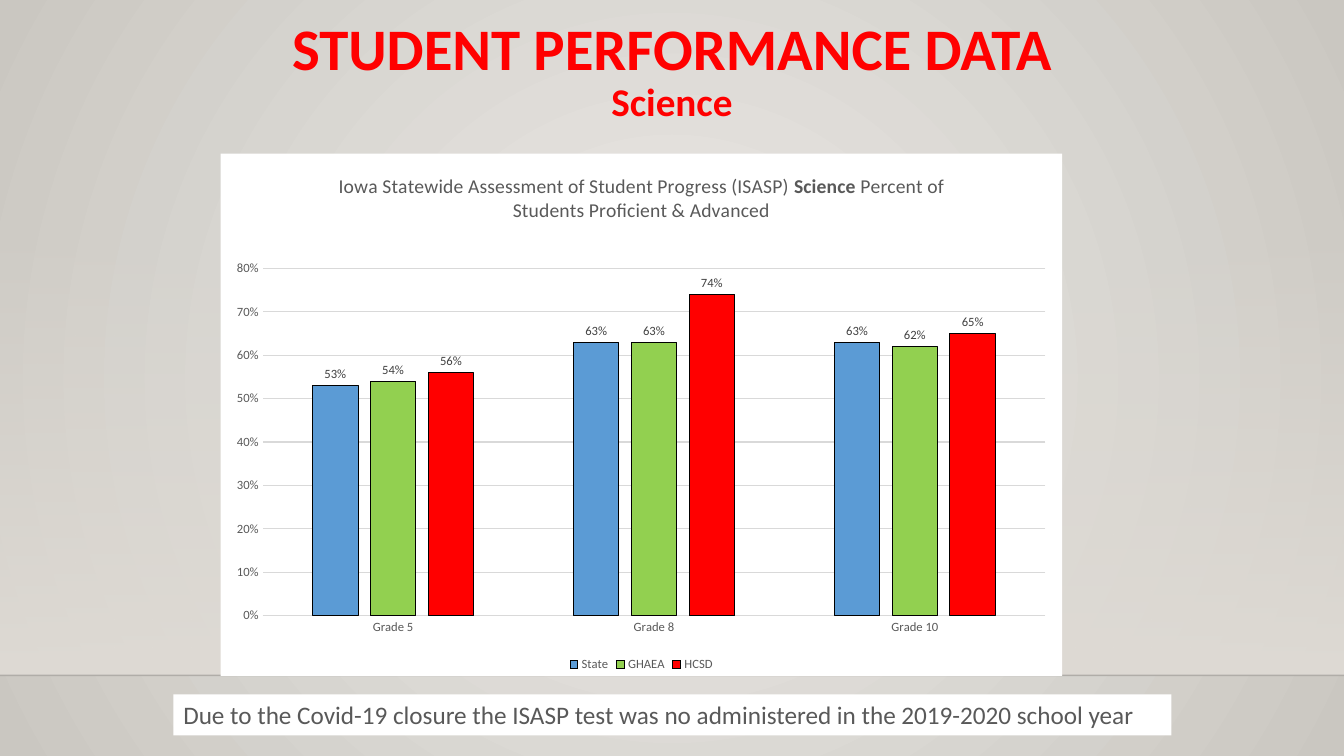
"""Build the science performance slide with its clustered column chart."""
from dataclasses import dataclass

from lxml import etree
from pptx import Presentation
from pptx.chart.data import CategoryChartData
from pptx.dml.color import RGBColor
from pptx.enum import chart as ch, shapes, text
from pptx.oxml import parse_xml
from pptx.oxml.ns import nsdecls, qn
from pptx.util import Cm, Pt


@dataclass(frozen=True)
class Theme:
    font: str = "Calibri"
    red: RGBColor = RGBColor(0xFF, 0, 0)
    blue: RGBColor = RGBColor(0x5B, 0x9B, 0xD5)
    green: RGBColor = RGBColor(0x92, 0xD0, 0x50)
    black: RGBColor = RGBColor(0, 0, 0)
    white: RGBColor = RGBColor(0xFF, 0xFF, 0xFF)
    grey: RGBColor = RGBColor(0x59, 0x59, 0x59)
    label: RGBColor = RGBColor(0x40, 0x40, 0x40)
    grid: RGBColor = RGBColor(0xD9, 0xD9, 0xD9)
    wall: RGBColor = RGBColor(0xDF, 0xDB, 0xD5)
    glow: RGBColor = RGBColor(0xEC, 0xEA, 0xE7)
    edge: RGBColor = RGBColor(0xCA, 0xC7, 0xC1)
    heading: Pt = Pt(42)
    subject: Pt = Pt(28)
    note: Pt = Pt(18)
    chart_title: Pt = Pt(14)
    chart_text: Pt = Pt(9)


theme = Theme()


def set_font(font, size, color, bold=False):
    font.name = theme.font
    font.size = size
    font.bold = bold
    font.color.rgb = color


def set_gradient(fill, colors):
    fill.gradient()
    for stop, position, color in zip(fill.gradient_stops, (0, 1), colors):
        stop.position = position
        stop.color.rgb = color


deck = Presentation()
deck.slide_width, deck.slide_height = Cm(33.87), Cm(19.05)
slide = deck.slides.add_slide(deck.slide_layouts[6])

set_gradient(slide.background.fill, (theme.glow, theme.edge))
backdrop = next(slide.element.iter(qn("a:gradFill")))
backdrop.remove(backdrop.find(qn("a:lin")))
radial = etree.SubElement(backdrop, qn("a:path"), {"path": "circle"})
etree.SubElement(radial, qn("a:fillToRect"), dict.fromkeys("ltrb", "50000"))

wall = slide.shapes.add_shape(
    shapes.MSO_SHAPE.RECTANGLE, 0, Cm(5.61), deck.slide_width, Cm(11.41))
wall.shadow.inherit = False
wall.line.fill.background()
set_gradient(wall.fill, (theme.wall, theme.wall))
wall.fill.gradient_angle = 270
clear_stop = next(wall.element.spPr.iter(qn("a:srgbClr")))
etree.SubElement(clear_stop, qn("a:alpha"), val="0")

floor = slide.shapes.add_connector(
    shapes.MSO_CONNECTOR.STRAIGHT, 0, Cm(17.02), deck.slide_width, Cm(17.02))
floor.line.width = Pt(1)
floor.line.color.rgb = theme.black
floor_color = next(floor.element.spPr.iter(qn("a:srgbClr")))
etree.SubElement(floor_color, qn("a:alpha"), val="20000")
etree.SubElement(floor.element.spPr, qn("a:effectLst"))

heading = slide.shapes.add_textbox(Cm(2.33), Cm(0.23), Cm(29.21), Cm(3.18)).text_frame
heading.word_wrap = True
heading.vertical_anchor = text.MSO_ANCHOR.MIDDLE
heading.text = "STUDENT PERFORMANCE DATA\nScience"
for line, size in zip(heading.paragraphs, (theme.heading, theme.subject)):
    line.alignment = text.PP_ALIGN.CENTER
    line.line_spacing = 0.9
    set_font(line.font, size, theme.red, bold=True)

note = slide.shapes.add_textbox(Cm(4.37), Cm(17.5), Cm(25.15), Cm(1.03))
note.fill.solid()
note.fill.fore_color.rgb = theme.white
note.text_frame.word_wrap = True
note.text_frame.text = (
    "Due to the Covid-19 closure the ISASP test was no administered "
    "in the 2019-2020 school year")
set_font(note.text_frame.paragraphs[0].font, theme.note, theme.grey)

results = {
    "State": (theme.blue, (0.53, 0.63, 0.63)),
    "GHAEA": (theme.green, (0.54, 0.63, 0.62)),
    "HCSD": (theme.red, (0.56, 0.74, 0.65)),
}
scores = CategoryChartData(number_format="0%")
scores.categories = ["Grade 5", "Grade 8", "Grade 10"]
for group, (color, values) in results.items():
    scores.add_series(group, values)
chart = slide.shapes.add_chart(
    ch.XL_CHART_TYPE.COLUMN_CLUSTERED,
    Cm(5.56), Cm(3.87), Cm(21.21), Cm(13.16), scores).chart
set_font(chart.font, theme.chart_text, theme.grey)
chart.element.find(qn("c:chart")).addnext(parse_xml(
    f'<c:spPr {nsdecls("c", "a")}><a:solidFill><a:srgbClr val="{theme.white}"/>'
    '</a:solidFill><a:ln><a:noFill/></a:ln></c:spPr>'))

title = chart.chart_title.text_frame.paragraphs[0]
set_font(title.font, theme.chart_title, theme.grey)
for words, bold in (
        ("Iowa Statewide Assessment of Student Progress (ISASP) ", False),
        ("Science", True),
        (" Percent of Students Proficient & Advanced", False)):
    run = title.add_run()
    run.text = words
    set_font(run.font, theme.chart_title, theme.grey, bold)
chart.chart_title.include_in_layout = False

chart.has_legend = True
chart.legend.position = ch.XL_LEGEND_POSITION.BOTTOM
chart.legend.include_in_layout = False
set_font(chart.legend.font, theme.chart_text, theme.grey)

grades, percents = chart.category_axis, chart.value_axis
for axis in (grades, percents):
    axis.major_tick_mark = axis.minor_tick_mark = ch.XL_TICK_MARK.NONE
    set_font(axis.tick_labels.font, theme.chart_text, theme.grey)
percents.minimum_scale, percents.maximum_scale, percents.major_unit = 0, 0.8, 0.1
percents.tick_labels.number_format = "0%"
percents.tick_labels.number_format_is_linked = False
percents.format.line.fill.background()
for rule in (grades.format.line, percents.major_gridlines.format.line):
    rule.color.rgb = theme.grid
    rule.width = Pt(0.75)

plot = chart.plots[0]
plot.gap_width, plot.overlap = 219, -27
plot.vary_by_categories = False
for series, (color, values) in zip(plot.series, results.values()):
    series.format.fill.solid()
    series.format.fill.fore_color.rgb = color
    series.format.line.color.rgb = theme.black
    series.format.line.width = Pt(0.75)
    labels = series.data_labels
    labels.show_value = True
    labels.position = ch.XL_LABEL_POSITION.OUTSIDE_END
    labels.number_format = "0%"
    labels.number_format_is_linked = False
    set_font(labels.font, theme.chart_text, theme.label)

plot_area = chart.element.find(qn("c:chart")).find(qn("c:plotArea"))
for old_layout in plot_area.findall(qn("c:layout")):
    plot_area.remove(old_layout)
layout = etree.Element(qn("c:layout"))
plot_area.insert(0, layout)
manual = etree.SubElement(layout, qn("c:manualLayout"))
for tag, value in (
        ("layoutTarget", "inner"), ("xMode", "edge"), ("yMode", "edge"),
        ("x", "0.05"), ("y", "0.22"), ("w", "0.93"), ("h", "0.665")):
    etree.SubElement(manual, qn(f"c:{tag}"), val=value)

deck.save("out.pptx")
